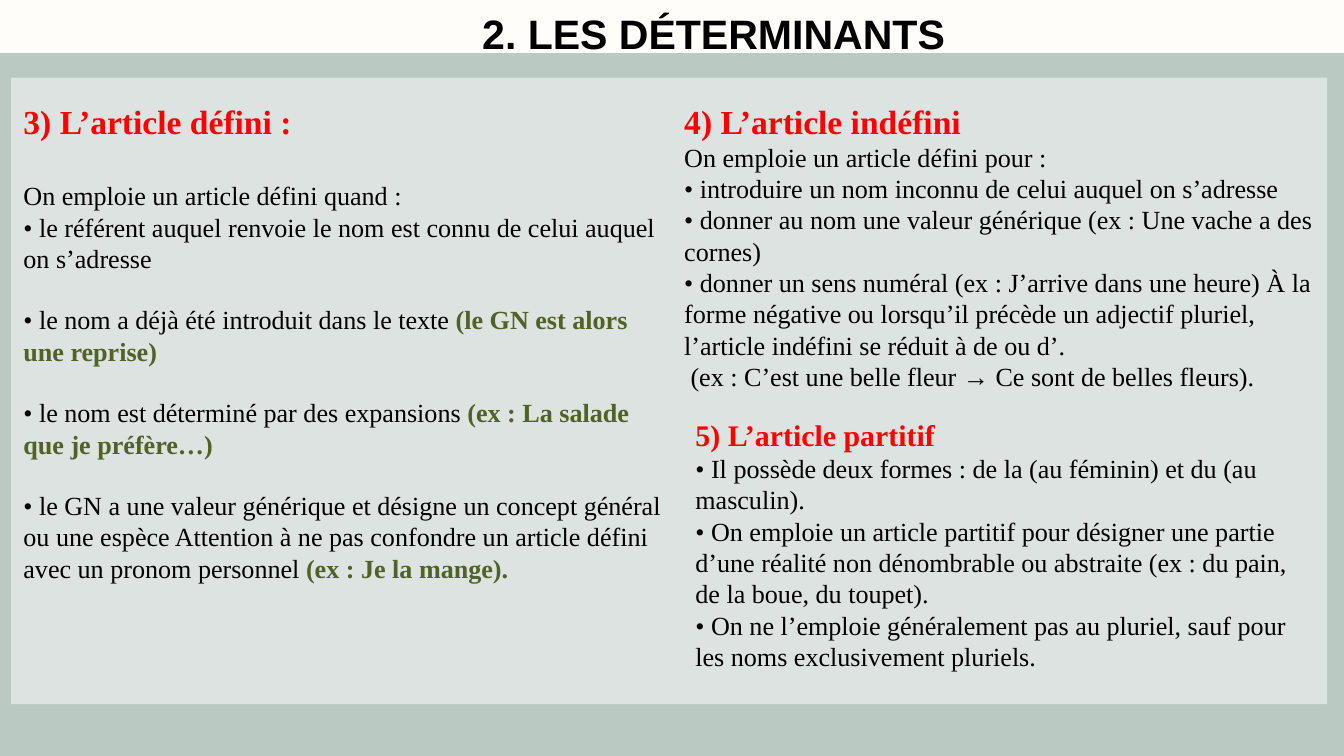
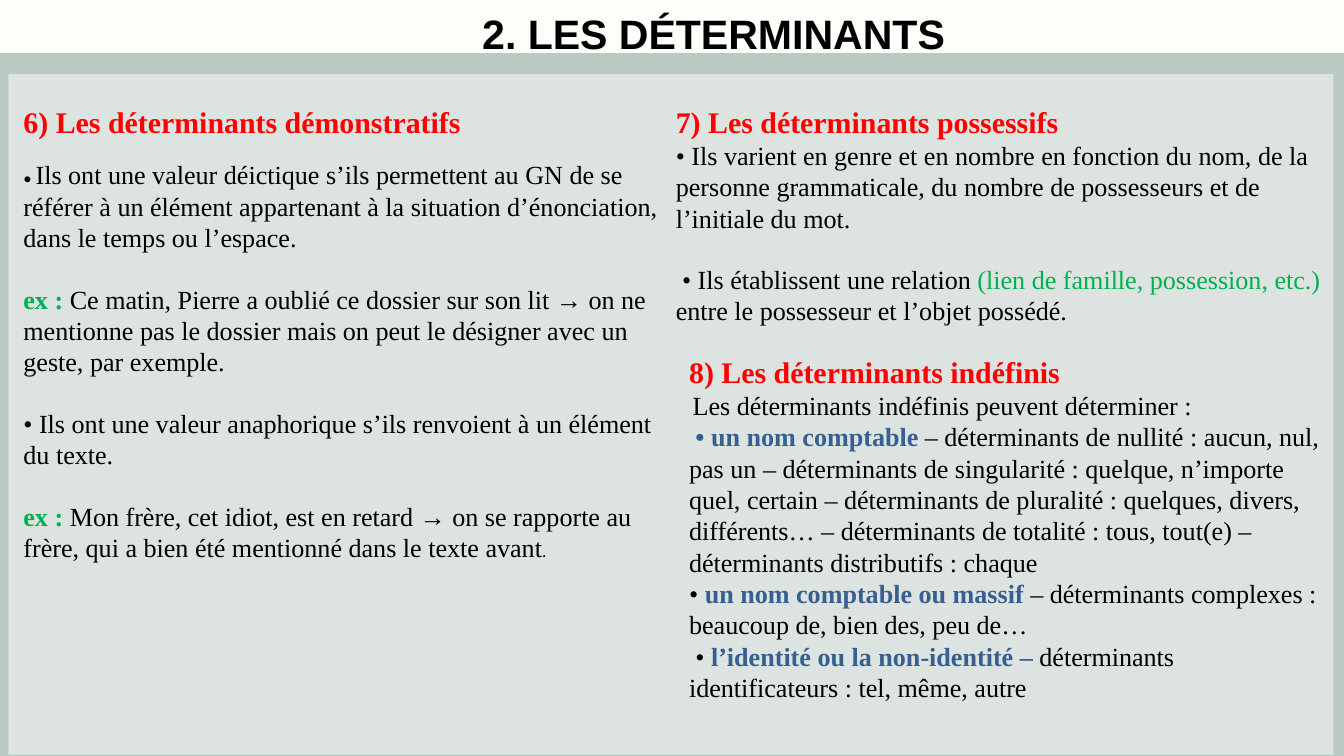
from dataclasses import dataclass

from pptx import Presentation
from pptx.dml.color import RGBColor
from pptx.enum.shapes import MSO_SHAPE
from pptx.enum.text import MSO_ANCHOR, MSO_AUTO_SIZE, PP_ALIGN
from pptx.util import Pt

RECTANGLE = MSO_SHAPE.RECTANGLE
TOP = MSO_ANCHOR.TOP
GROW = MSO_AUTO_SIZE.SHAPE_TO_FIT_TEXT
CENTER = PP_ALIGN.CENTER
TITLE_ONLY = 5
EMU_PER_PX = 9525
SLIDE_WIDTH, SLIDE_HEIGHT = 1920, 1080
BAND_TOP = 76
BLANK_LINE = 32.2
SPACE = 9


@dataclass(frozen=True)
class Style:
    """Look of a piece of text."""
    size: int = 28
    color: str = "000000"
    bold: bool = False
    name: str = "Times New Roman"


@dataclass(frozen=True)
class Theme:
    """Colours and text styles shared by the slides."""
    background: str = "FFFDFA"
    band: str = "BAC9C2"
    panel: str = "DDE3E0"
    title: Style = Style(44, bold=True, name="Arial")
    large_heading: Style = Style(36, "FF0000", True)
    heading: Style = Style(32, "FF0000", True)
    body: Style = Style()
    small: Style = Style(18, name="Calibri")
    olive: Style = Style(color="4F6228", bold=True)
    example: Style = Style(color="00B050", bold=True)
    remark: Style = Style(color="00B050")
    term: Style = Style(color="376092", bold=True)


THEME = Theme()


@dataclass(frozen=True)
class Line:
    """A paragraph: its (text, style) runs, space before in points, first-line indent in px."""
    runs: tuple
    before: float = 0
    indent: int = 0


def line(*parts, before=0, indent=0):
    """Make a paragraph from plain strings in body style and (text, style) pairs."""
    runs = tuple((part, THEME.body) if isinstance(part, str) else part for part in parts)
    return Line(runs, before, indent)


def px(value):
    """Turn px into EMU."""
    return value * EMU_PER_PX


def set_font(font, style):
    """Apply a style to a font."""
    font.name = style.name
    font.size = Pt(style.size)
    font.bold = style.bold
    font.color.rgb = RGBColor.from_string(style.color)


def write_line(paragraph, content):
    """Fill a paragraph with its runs, spacing and indent."""
    if content.before:
        paragraph.space_before = Pt(content.before)
    if content.indent:
        paragraph._p.get_or_add_pPr().set("indent", str(px(content.indent)))
    for text, style in content.runs:
        run = paragraph.add_run()
        run.text = text
        if len(content.runs) > 1:
            set_font(run.font, style)
    if len(content.runs) == 1:
        set_font(paragraph.font, content.runs[0][1])


def add_block(slide, box, color):
    """Add a plain filled rectangle."""
    shape = slide.shapes.add_shape(RECTANGLE, *map(px, box))
    shape.shadow.inherit = False
    shape.fill.solid()
    shape.fill.fore_color.rgb = RGBColor.from_string(color)
    shape.line.fill.background()


def add_section(slide, box, lines):
    """Add a text box holding a heading and its paragraphs."""
    frame = slide.shapes.add_textbox(*map(px, box)).text_frame
    frame.word_wrap = True
    frame.auto_size = GROW
    for index, content in enumerate(lines):
        paragraph = frame.add_paragraph() if index else frame.paragraphs[0]
        write_line(paragraph, content)


def format_title(slide, text):
    """Place and format the title in front of the band."""
    title = slide.shapes.title
    title.left, title.top, title.width, title.height = map(px, (392, 1, 1256, 161))
    title.element.getparent().append(title.element)
    frame = title.text_frame
    frame.margin_left = frame.margin_top = frame.margin_right = frame.margin_bottom = 0
    frame.vertical_anchor = TOP
    frame.word_wrap = True
    frame.auto_size = GROW
    paragraph = frame.paragraphs[0]
    paragraph.alignment = CENTER
    paragraph.line_spacing = Pt(61.1)
    write_line(paragraph, line((text, THEME.title)))


def add_lesson(presentation, panel, sections):
    """Add a slide with the band, the title, a panel and its sections."""
    slide = presentation.slides.add_slide(presentation.slide_layouts[TITLE_ONLY])
    add_block(slide, (0, BAND_TOP, SLIDE_WIDTH, SLIDE_HEIGHT - BAND_TOP), THEME.band)
    format_title(slide, "2. LES DÉTERMINANTS")
    add_block(slide, panel, THEME.panel)
    for box, lines in sections:
        add_section(slide, box, lines)


DEFINITE = [
    line(("3) L’article défini :", THEME.large_heading)),
    line("On emploie un article défini quand :", before=41.4),
    line("• le référent auquel renvoie le nom est connu de celui auquel on s’adresse"),
    line("• le nom a déjà été introduit dans le texte ",
         ("(le GN est alors une reprise)", THEME.olive), before=BLANK_LINE),
    line("• le nom est déterminé par des expansions ",
         ("(ex : La salade que je préfère…)", THEME.olive), before=BLANK_LINE),
    line("• le GN a une valeur générique et désigne un concept général ou une espèce "
         "Attention à ne pas confondre un article défini avec un pronom personnel ",
         ("(ex : Je la mange).", THEME.olive), before=BLANK_LINE),
]

INDEFINITE = [
    line(("4) L’article indéfini", THEME.large_heading)),
    line("On emploie un article défini pour :"),
    line("• introduire un nom inconnu de celui auquel on s’adresse"),
    line("• donner au nom une valeur générique (ex : Une vache a des cornes)"),
    line("• donner un sens numéral (ex : J’arrive dans une heure) À la forme négative ou "
         "lorsqu’il précède un adjectif pluriel, l’article indéfini se réduit à de ou d’."),
    line("(ex : C’est une belle fleur → Ce sont de belles fleurs).", indent=SPACE),
]

PARTITIVE = [
    line(("5) L’article partitif", THEME.heading)),
    line("• Il possède deux formes : de la (au féminin) et du (au masculin)."),
    line("• On emploie un article partitif pour désigner une partie d’une réalité non "
         "dénombrable ou abstraite (ex : du pain, de la boue, du toupet)."),
    line("• On ne l’emploie généralement pas au pluriel, sauf pour les noms "
         "exclusivement pluriels."),
]

DEMONSTRATIVE = [
    line(("6) Les déterminants démonstratifs", THEME.heading)),
    line(("• ", THEME.small),
         "Ils ont une valeur déictique s’ils permettent au GN de se référer à un élément "
         "appartenant à la situation d’énonciation, dans le temps ou l’espace.", before=21),
    line(("ex : ", THEME.example),
         "Ce matin, Pierre a oublié ce dossier sur son lit → on ne mentionne pas le dossier "
         "mais on peut le désigner avec un geste, par exemple.", before=BLANK_LINE),
    line("• Ils ont une valeur anaphorique s’ils renvoient à un élément du texte.",
         before=BLANK_LINE),
    line(("ex : ", THEME.example),
         "Mon frère, cet idiot, est en retard → on se rapporte au frère, qui a bien été "
         "mentionné dans le texte avant", (".", THEME.small), before=BLANK_LINE),
]

POSSESSIVE = [
    line(("7) Les déterminants possessifs", THEME.heading)),
    line("• Ils varient en genre et en nombre en fonction du nom, de la personne "
         "grammaticale, du nombre de possesseurs et de l’initiale du mot."),
    line("• Ils établissent une relation ",
         ("(lien de famille, possession, etc.) ", THEME.remark),
         "entre le possesseur et l’objet possédé.", before=BLANK_LINE, indent=SPACE),
]

INDEFINITE_DETERMINERS = [
    line(("8) Les déterminants indéfinis", THEME.heading)),
    line("Les déterminants indéfinis peuvent déterminer :", indent=5),
    line(("• un nom comptable ", THEME.term),
         "– déterminants de nullité : aucun, nul, pas un – déterminants de singularité : "
         "quelque, n’importe quel, certain – déterminants de pluralité : quelques, divers, "
         "différents… – déterminants de totalité : tous, tout(e) – déterminants "
         "distributifs : chaque", indent=SPACE),
    line("• ", ("un nom comptable ou massif ", THEME.term),
         "– déterminants complexes : beaucoup de, bien des, peu de…"),
    line("• ", ("l’identité ou la non-identité – ", THEME.term),
         "déterminants identificateurs : tel, même, autre", indent=SPACE),
]


def main():
    """Build the two slides and save them."""
    presentation = Presentation()
    presentation.slide_width, presentation.slide_height = px(SLIDE_WIDTH), px(SLIDE_HEIGHT)
    background = presentation.slide_master.background.fill
    background.solid()
    background.fore_color.rgb = RGBColor.from_string(THEME.background)
    add_lesson(presentation, (16, 111, 1880, 895), [
        ((24, 139, 944, 714), DEFINITE),
        ((968, 139, 928, 430), INDEFINITE),
        ((984, 590, 905, 378), PARTITIVE),
    ])
    add_lesson(presentation, (12, 106, 1893, 972), [
        ((24, 143, 928, 672), DEMONSTRATIVE),
        ((956, 143, 940, 333), POSSESSIVE),
        ((975, 500, 929, 514), INDEFINITE_DETERMINERS),
    ])
    presentation.save("out.pptx")


if __name__ == "__main__":
    main()
